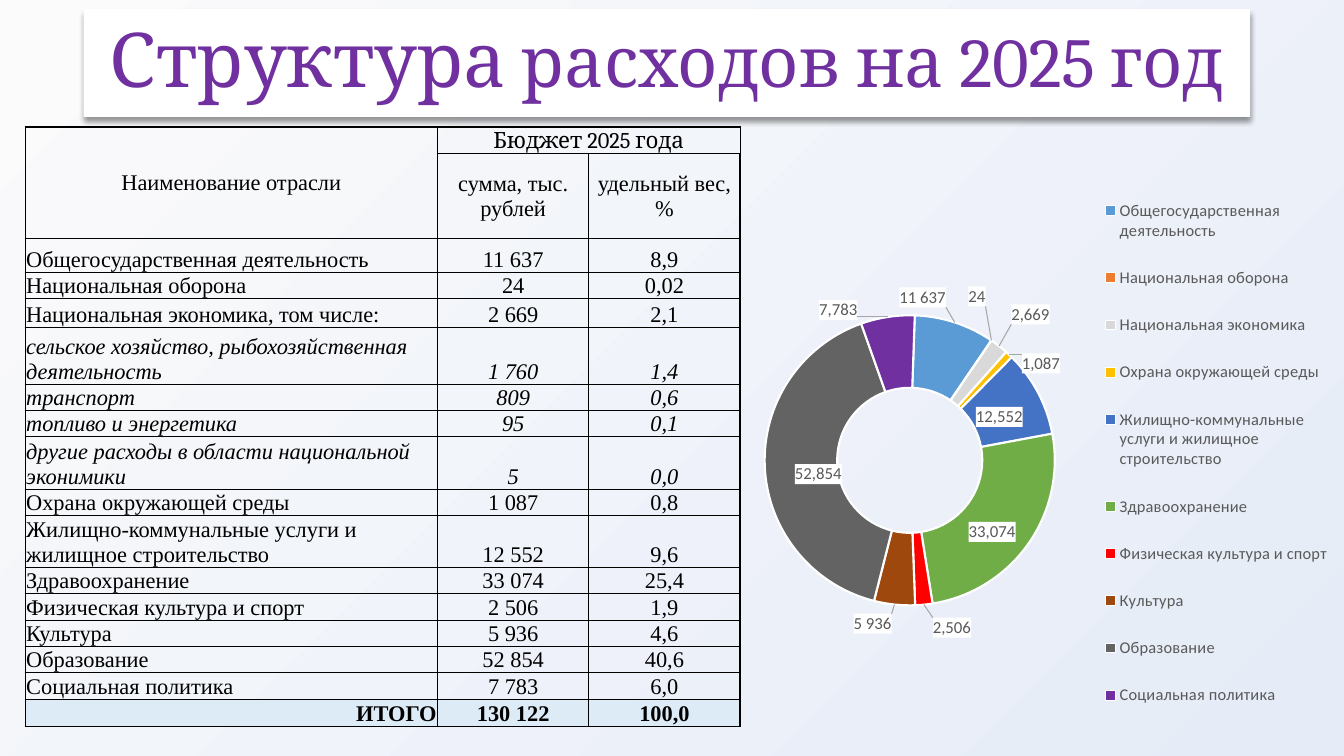
from dataclasses import dataclass
from itertools import accumulate
from math import cos, radians, sin

from lxml import etree
from pptx import Presentation
from pptx.chart.data import CategoryChartData
from pptx.dml.color import RGBColor
from pptx.enum.chart import XL_CHART_TYPE, XL_LEGEND_POSITION
from pptx.enum.text import MSO_ANCHOR, MSO_AUTO_SIZE, PP_ALIGN
from pptx.oxml import parse_xml
from pptx.oxml.ns import nsdecls, qn
from pptx.util import Inches, Pt

DOUGHNUT = XL_CHART_TYPE.DOUGHNUT
LEGEND_RIGHT = XL_LEGEND_POSITION.RIGHT
MIDDLE, BOTTOM = MSO_ANCHOR.MIDDLE, MSO_ANCHOR.BOTTOM
LEFT, CENTER, RIGHT = PP_ALIGN.LEFT, PP_ALIGN.CENTER, PP_ALIGN.RIGHT
NO_AUTOFIT = MSO_AUTO_SIZE.NONE
TITLE_ONLY = 5


@dataclass(frozen=True)
class Theme:
    title_font: str = "Cambria"
    table_font: str = "Times New Roman"
    chart_font: str = "Calibri"
    title: str = "7030A0"
    ink: str = "000000"
    white: str = "FFFFFF"
    total_fill: str = "DDEBF7"
    chart_text: str = "595959"
    leader: str = "A6A6A6"
    background: tuple = ("E5EBF7", "FBFBFB")
    title_sizes: tuple = (54, 50)
    table_size: float = 16
    label_size: float = 12
    legend_size: float = 11.7
    thin: float = 0.5
    thick: float = 1


THEME = Theme()

# name, amount, share, row height
BUDGET_ROWS = [
    ("Общегосударственная деятельность", "11 637", "8,9", 0.34),
    ("Национальная оборона", "24", "0,02", 0.25),
    ("Национальная экономика, том числе:", "2 669", "2,1", 0.29),
    ("сельское хозяйство, рыбохозяйственная деятельность", "1 760", "1,4", 0.56),
    ("транспорт", "809", "0,6", 0.26),
    ("топливо и энергетика", "95", "0,1", 0.26),
    ("другие расходы в области национальной эконимики", "5", "0,0", 0.52),
    ("Охрана окружающей среды", "1 087", "0,8", 0.26),
    ("Жилищно-коммунальные услуги и жилищное строительство", "12 552", "9,6", 0.52),
    ("Здравоохранение", "33 074", "25,4", 0.26),
    ("Физическая культура и спорт", "2 506", "1,9", 0.26),
    ("Культура", "5 936", "4,6", 0.26),
    ("Образование", "52 854", "40,6", 0.26),
    ("Социальная политика", "7 783", "6,0", 0.27),
    ("ИТОГО", "130 122", "100,0", 0.27),
]
HEADER_HEIGHTS = [0.26, 0.84]
SUBITEM_ROWS = range(5, 9)
COLUMN_WIDTHS = [4.09, 1.5, 1.5]

# name, value, colour, label centre on the slide, fixed label text
SECTORS = [
    ("Общегосударственная деятельность", 11653, "5B9BD5", (9.15, 2.94), "11 637"),
    ("Национальная оборона", 24, "ED7D31", (9.69, 2.93), None),
    ("Национальная экономика", 2669, "D9D9D9", (10.22, 3.11), None),
    ("Охрана окружающей среды", 1087, "FFC000", (10.32, 3.6), None),
    ("Жилищно-коммунальные услуги и жилищное строительство", 12552, "4472C4",
     (9.91, 4.13), None),
    ("Здравоохранение", 33074, "70AD47", (9.84, 5.27), None),
    ("Физическая культура и спорт", 2506, "FF0000", (9.44, 6.22), None),
    ("Культура", 5920, "9E480E", (8.65, 6.18), "5 936"),
    ("Образование", 52854, "636363", (8.11, 4.7), None),
    ("Социальная политика", 7783, "7030A0", (8.31, 3.07), None),
]
CHART_BOX = (7.33, 1.16, 5.92, 6.23)
RING_CENTER, RING_RADIUS, START_ANGLE = (9.02, 4.56), 1.08, 2


def style_font(font, name, size, color):
    font.name, font.size = name, Pt(size)
    font.color.rgb = RGBColor.from_string(color)


def set_background(slide):
    fill = slide.background.fill
    fill.gradient()
    fill.gradient_angle = 135
    for stop, color in zip(fill.gradient_stops, THEME.background):
        stop.color.rgb = RGBColor.from_string(color)


def add_title(slide):
    title = slide.shapes.title
    title.left, title.top, title.width, title.height = map(
        Inches, (0.83, 0.09, 11.57, 1.07))
    title.fill.solid()
    title.fill.fore_color.rgb = RGBColor.from_string(THEME.white)
    title._element.spPr.append(parse_xml(
        f'<a:effectLst {nsdecls("a")}><a:outerShdw blurRad="50800" dist="38100" '
        f'dir="5400000" rotWithShape="0"><a:srgbClr val="{THEME.ink}">'
        '<a:alpha val="40000"/></a:srgbClr></a:outerShdw></a:effectLst>'))
    frame = title.text_frame
    frame.auto_size, frame.vertical_anchor = NO_AUTOFIT, MIDDLE
    paragraph = frame.paragraphs[0]
    paragraph.alignment, paragraph.line_spacing = CENTER, 0.9
    for text, size in zip(("Структура", " расходов на 2025 год"), THEME.title_sizes):
        run = paragraph.add_run()
        run.text = text
        style_font(run.font, THEME.title_font, size, THEME.title)


def set_borders(cell, widths):
    """Draw the cell's lines; widths are left, right, top and bottom in points."""
    properties = cell._tc.get_or_add_tcPr()
    for position, (side, width) in enumerate(zip("LRTB", widths)):
        properties.insert(position, parse_xml(
            f'<a:ln{side} {nsdecls("a")} w="{Pt(width)}"><a:solidFill>'
            f'<a:srgbClr val="{THEME.ink}"/></a:solidFill></a:ln{side}>'))


def fill_cell(cell, text, align, anchor, font_name=THEME.table_font):
    cell.text = text
    cell.vertical_anchor = anchor
    paragraph = cell.text_frame.paragraphs[0]
    paragraph.alignment = align
    for run in paragraph.runs:
        style_font(run.font, font_name, THEME.table_size, THEME.ink)
        yield run.font


def add_budget_table(slide):
    heights = HEADER_HEIGHTS + [row[3] for row in BUDGET_ROWS]
    last_row, last_column = len(heights) - 1, len(COLUMN_WIDTHS) - 1
    table = slide.shapes.add_table(
        len(heights), len(COLUMN_WIDTHS), Inches(0.25), Inches(1.26),
        Inches(sum(COLUMN_WIDTHS)), Inches(sum(heights))).table
    table.first_row = table.horz_banding = False
    for column, width in zip(table.columns, COLUMN_WIDTHS):
        column.width = Inches(width)
    contents = [("Наименование отрасли", "Бюджет 2025 года", ""),
                ("", "сумма, тыс. рублей", "удельный вес, %")]
    contents += [row[:3] for row in BUDGET_ROWS]
    for r, (height, texts) in enumerate(zip(heights, contents)):
        table.rows[r].height = Inches(height)
        is_header, is_total = r < len(HEADER_HEIGHTS), r == last_row
        for c, text in enumerate(texts):
            cell = table.cell(r, c)
            cell.margin_left = cell.margin_right = cell.margin_top = Inches(0.01)
            cell.margin_bottom = 0
            if is_total:
                cell.fill.solid()
                cell.fill.fore_color.rgb = RGBColor.from_string(THEME.total_fill)
            else:
                cell.fill.background()
            align = CENTER if c or is_header else RIGHT if is_total else LEFT
            font_name = THEME.title_font if (r, c) == (0, 1) else THEME.table_font
            for font in fill_cell(cell, text, align,
                                  MIDDLE if is_header else BOTTOM, font_name):
                font.bold, font.italic = is_total, r in SUBITEM_ROWS
            is_thick = (c == 0, c == last_column, r in (0, 2, last_row),
                        r in (1, last_row - 1, last_row) or (r, c) == (0, 0))
            set_borders(cell, [THEME.thick if edge else THEME.thin for edge in is_thick])
    table.cell(0, 0).merge(table.cell(1, 0))
    table.cell(0, 1).merge(table.cell(0, 2))


def manual_layout(**settings):
    layout = etree.Element(qn("c:layout"))
    manual = etree.SubElement(layout, qn("c:manualLayout"))
    for tag, value in settings.items():
        etree.SubElement(manual, qn(f"c:{tag}")).set("val", str(value))
    return layout


def label_offsets():
    """Shift of each label from the middle of its ring segment, as chart fractions."""
    values = [sector[1] for sector in SECTORS]
    for (_, value, _, (x, y), _), end in zip(SECTORS, accumulate(values)):
        angle = radians(START_ANGLE + 360 * (end - value / 2) / sum(values))
        dx = x - RING_CENTER[0] - RING_RADIUS * sin(angle)
        dy = y - RING_CENTER[1] + RING_RADIUS * cos(angle)
        yield round(dx / CHART_BOX[2], 3), round(dy / CHART_BOX[3], 3)


def format_labels(series):
    labels = series.data_labels
    labels.show_value = True
    labels.number_format, labels.number_format_is_linked = "#,##0", False
    label_font = (THEME.chart_font, THEME.label_size, THEME.chart_text)
    style_font(labels.font, *label_font)
    for index, (_, _, color, _, text) in enumerate(SECTORS):
        point = series.points[index]
        point.format.fill.solid()
        point.format.fill.fore_color.rgb = RGBColor.from_string(color)
        point.format.line.color.rgb = RGBColor.from_string(THEME.white)
        point.format.line.width = Pt(1.5)
        if text:
            point.data_label.text_frame.text = text
            run = point.data_label.text_frame.paragraphs[0].runs[0]
            style_font(run.font, *label_font)
        else:
            style_font(point.data_label.font, *label_font)
    dLbls = series._element.find(qn("c:dLbls"))
    for dLbl, (x, y) in zip(dLbls.findall(qn("c:dLbl")), label_offsets()):
        dLbl.find(qn("c:idx")).addnext(manual_layout(x=x, y=y))
        for old in dLbl.findall(qn("c:spPr")):
            dLbl.remove(old)
        following = dLbl.find(qn("c:txPr"))
        if following is None:
            following = dLbl.find(qn("c:showLegendKey"))
        following.addprevious(parse_xml(
            f'<c:numFmt {nsdecls("c")} formatCode="#,##0" sourceLinked="0"/>'))
        following.addprevious(parse_xml(
            f'<c:spPr {nsdecls("c", "a")}><a:solidFill><a:srgbClr val="{THEME.white}"/>'
            '</a:solidFill></c:spPr>'))
    dLbls.append(parse_xml(
        f'<c:leaderLines {nsdecls("c", "a")}><c:spPr><a:ln w="9525"><a:solidFill>'
        f'<a:srgbClr val="{THEME.leader}"/></a:solidFill></a:ln></c:spPr></c:leaderLines>'))


def add_spending_chart(slide):
    data = CategoryChartData(number_format="#,##0")
    data.categories = [sector[0] for sector in SECTORS]
    data.add_series("Series 1", [sector[1] for sector in SECTORS])
    chart = slide.shapes.add_chart(DOUGHNUT, *map(Inches, CHART_BOX), data).chart
    style_font(chart.font, THEME.chart_font, 10, THEME.ink)
    chart.has_title, chart.has_legend = False, True
    chart.legend.position, chart.legend.include_in_layout = LEGEND_RIGHT, False
    style_font(chart.legend.font, THEME.chart_font, THEME.legend_size, THEME.chart_text)
    chart.plots[0].vary_by_categories = True
    format_labels(chart.plots[0].series[0])

    space = chart._chartSpace
    next(space.iter(qn("c:holeSize"))).set("val", "75")
    next(space.iter(qn("c:firstSliceAng"))).set("val", str(START_ANGLE))
    plot_area = next(space.iter(qn("c:plotArea")))
    for old in plot_area.findall(qn("c:layout")):
        plot_area.remove(old)
    plot_area.insert(0, manual_layout(layoutTarget="inner", xMode="edge", yMode="edge",
                                      x=0.039, y=0.316, w=0.494, h=0.462))
    legend = next(space.iter(qn("c:legend")))
    for old in legend.findall(qn("c:layout")):
        legend.remove(old)
    legend.find(qn("c:legendPos")).addnext(manual_layout(
        xMode="edge", yMode="edge", x=0.6, y=0.09, w=0.4, h=0.89))


def main():
    presentation = Presentation()
    presentation.slide_width, presentation.slide_height = Inches(13.33), Inches(7.5)
    slide = presentation.slides.add_slide(presentation.slide_layouts[TITLE_ONLY])
    set_background(slide)
    add_title(slide)
    add_spending_chart(slide)
    add_budget_table(slide)
    presentation.save("out.pptx")


if __name__ == "__main__":
    main()
